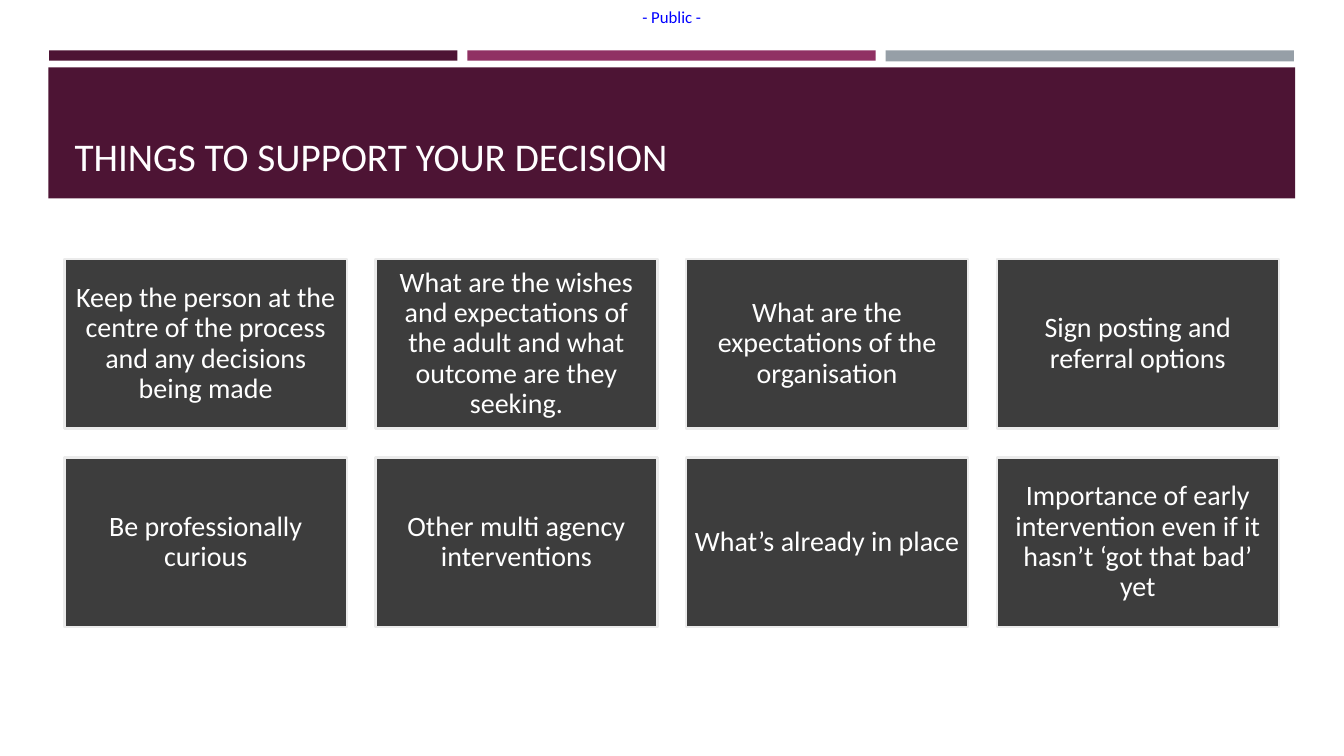
"""Build the slide of eight things that support a decision."""
import pptx
import pptx.dml.color
import pptx.enum.shapes
import pptx.enum.text
import pptx.util

Cm = pptx.util.Cm
Pt = pptx.util.Pt
RGBColor = pptx.dml.color.RGBColor
ALIGN = pptx.enum.text.PP_ALIGN
ANCHOR = pptx.enum.text.MSO_ANCHOR

PLUM = RGBColor(0x4D, 0x14, 0x34)
BERRY = RGBColor(0x90, 0x31, 0x63)
STEEL = RGBColor(0x96, 0x9F, 0xA7)
CHARCOAL = RGBColor(0x3D, 0x3D, 0x3D)
PALE = RGBColor(0xEB, 0xEB, 0xEB)
WHITE = RGBColor(0xFF, 0xFF, 0xFF)
OFF_WHITE = RGBColor(0xFF, 0xFE, 0xFF)
BLUE = RGBColor(0x00, 0x00, 0xFF)

MARKING = "- Public -"
TITLE = "THINGS TO SUPPORT YOUR DECISION"
SUPPORTS = [
    "Keep the person at the centre of the process and any decisions being made",
    "What are the wishes and expectations of the adult and what outcome are they seeking.",
    "What are the expectations of the organisation",
    "Sign posting and referral options",
    "Be professionally curious",
    "Other multi agency interventions",
    "What’s already in place",
    "Importance of early intervention even if it hasn’t ‘got that bad’ yet",
]
STRIPES = [(PLUM, 0.26), (BERRY, 0.26), (STEEL, 0.28)]

COLUMNS = 4
CARD_LEFT, CARD_TOP, CARD_WIDTH, CARD_HEIGHT = 1.63, 6.53, 7.11, 4.27
CARD_STEP_X, CARD_STEP_Y = 7.83, 5.0
STRIPE_LEFT, STRIPE_TOP, STRIPE_WIDTH, STRIPE_STEP = 1.24, 1.27, 10.29, 10.54


def add_block(slide, box, fill, outline=None):
    """Add a flat rectangle, outlined if a colour is given."""
    block = slide.shapes.add_shape(
        pptx.enum.shapes.MSO_SHAPE.RECTANGLE, *map(Cm, box))
    block.shadow.inherit = False
    block.fill.solid()
    block.fill.fore_color.rgb = fill
    if outline is None:
        block.line.fill.background()
    else:
        block.line.color.rgb = outline
        block.line.width = Pt(1.75)
    return block


def write(holder, words, size, color, align, anchor, inset, spacing=1.0):
    """Put one formatted paragraph into a shape or text box."""
    frame = holder.text_frame
    frame_format = {"word_wrap": True, "vertical_anchor": anchor}
    for side in ("left", "right", "top", "bottom"):
        frame_format[f"margin_{side}"] = Cm(inset)
    for key, value in frame_format.items():
        setattr(frame, key, value)
    paragraph = frame.paragraphs[0]
    for key, value in {"alignment": align, "line_spacing": spacing}.items():
        setattr(paragraph, key, value)
    run = paragraph.add_run()
    run.text = words
    for key, value in {"name": "Calibri", "size": Pt(size)}.items():
        setattr(run.font, key, value)
    run.font.color.rgb = color


def main():
    """Lay out the slide and save it."""
    deck = pptx.Presentation()
    deck.slide_width, deck.slide_height = Cm(33.87), Cm(19.05)
    slide = deck.slides.add_slide(deck.slide_layouts[6])

    for index, (color, height) in enumerate(STRIPES):
        left = STRIPE_LEFT + index * STRIPE_STEP
        add_block(slide, (left, STRIPE_TOP, STRIPE_WIDTH, height), color)

    marking = slide.shapes.add_textbox(Cm(16.13), Cm(0.18), Cm(1.6), Cm(0.51))
    write(marking, MARKING, 12, BLUE, ALIGN.CENTER, ANCHOR.TOP, 0)
    marking.text_frame.word_wrap = False

    add_block(slide, (1.22, 1.7, 31.42, 3.3), PLUM)
    title = slide.shapes.add_textbox(Cm(1.63), Cm(1.96), Cm(30.63), Cm(2.82))
    write(title, TITLE, 28, OFF_WHITE, ALIGN.LEFT, ANCHOR.BOTTOM, 0.25)

    for index, support in enumerate(SUPPORTS):
        row, column = divmod(index, COLUMNS)
        left = CARD_LEFT + column * CARD_STEP_X
        top = CARD_TOP + row * CARD_STEP_Y
        card = add_block(
            slide, (left, top, CARD_WIDTH, CARD_HEIGHT), CHARCOAL, PALE)
        write(card, support, 20, WHITE, ALIGN.CENTER, ANCHOR.MIDDLE, 0.2, 0.9)

    deck.save("out.pptx")


if __name__ == "__main__":
    main()
